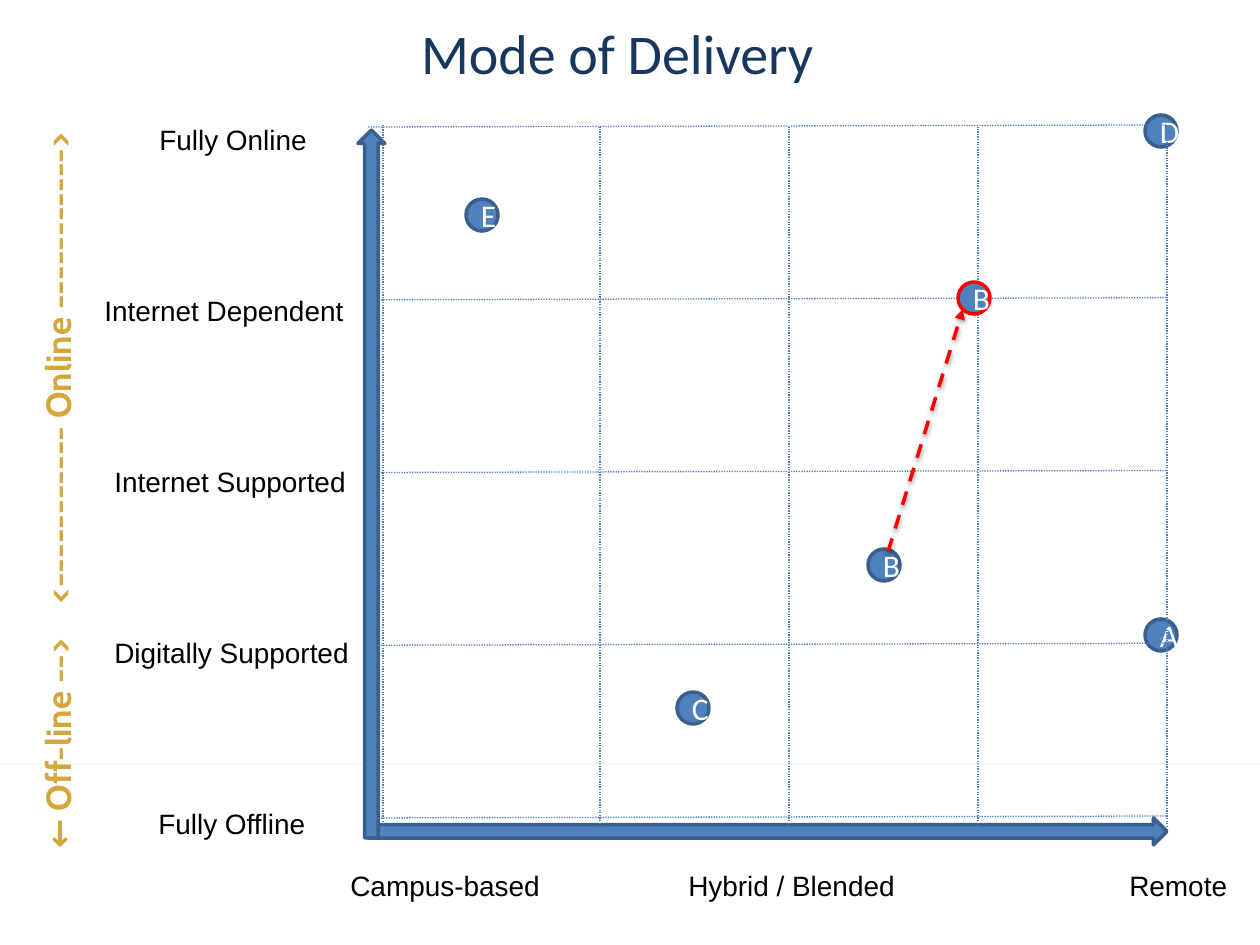
import pptx
import pptx.util
from pptx.dml.color import RGBColor
from pptx.enum.dml import MSO_LINE
from pptx.enum.shapes import MSO_CONNECTOR, MSO_SHAPE
from pptx.enum.text import MSO_ANCHOR, PP_ALIGN
from pptx.oxml import parse_xml
from pptx.oxml.ns import nsdecls

EMU_PER_PX = 914400 / 126
BLUE, DARK_BLUE, GRID_BLUE = "4F81BD", "3A5F8C", "4B7EBC"
NAVY, GOLD, RED, BLACK, WHITE = "17375E", "D4A73C", "FF0000", "000000", "FFFFFF"


def px(n):
    return pptx.util.Emu(round(n * EMU_PER_PX))


def rgb(value):
    return RGBColor.from_string(value)


def set_effects(sp, alpha=None):
    """Add an empty effect list, or a soft shadow cast downwards."""
    shadow = "" if alpha is None else (
        '<a:outerShdw blurRad="39370" dist="22860" dir="5400000" rotWithShape="0">'
        f'<a:srgbClr val="{BLACK}"><a:alpha val="{alpha * 1000}"/></a:srgbClr></a:outerShdw>')
    sp._element.spPr.append(
        parse_xml(f'<a:effectLst {nsdecls("a")}>{shadow}</a:effectLst>'))


def set_text(sp, text, size, font, color, align=PP_ALIGN.LEFT,
             anchor=MSO_ANCHOR.MIDDLE, bold=False, wrap=False):
    tf = sp.text_frame
    tf.text = text
    tf.word_wrap = wrap
    tf.vertical_anchor = anchor
    p = tf.paragraphs[0]
    p.alignment = align
    f = p.runs[0].font
    f.size, f.name, f.bold = pptx.util.Pt(size), font, bold
    f.color.rgb = rgb(color)


def clear_insets(sp):
    tf = sp.text_frame
    tf.margin_left = tf.margin_right = tf.margin_top = tf.margin_bottom = 0


def add_block(s, kind, x, y, w, h, line=DARK_BLUE):
    sp = s.shapes.add_shape(kind, px(x), px(y), px(w), px(h))
    sp.shadow.inherit = False
    sp.fill.solid()
    sp.fill.fore_color.rgb = rgb(BLUE)
    sp.line.color.rgb = rgb(line)
    sp.line.width = pptx.util.Pt(2)
    return sp


def add_line(s, x1, y1, x2, y2, color, width, dash):
    ln = s.shapes.add_connector(MSO_CONNECTOR.STRAIGHT, px(x1), px(y1), px(x2), px(y2))
    ln.line.color.rgb = rgb(color)
    ln.line.width = pptx.util.Pt(width)
    ln.line.dash_style = dash
    return ln


def add_point(s, x, y, letter, line=DARK_BLUE):
    sp = add_block(s, MSO_SHAPE.OVAL, x, y, 32, 32, line)
    set_text(sp, letter, 18, "Calibri", WHITE, PP_ALIGN.CENTER, wrap=True)


def add_label(s, x, y, w, text):
    sp = s.shapes.add_textbox(px(x), px(y), px(w), px(49))
    set_text(sp, text, 16, "Arial", BLACK)


def add_title(s, x, y, w, h):
    sp = s.shapes.title
    sp.left, sp.top, sp.width, sp.height = px(x), px(y), px(w), px(h)
    clear_insets(sp)
    set_text(sp, "Mode of Delivery", 32, "Calibri", NAVY, PP_ALIGN.CENTER)


def add_footer_band(s, x, y, w, h):
    sp = s.shapes.add_shape(MSO_SHAPE.RECTANGLE, px(x), px(y), px(w), px(h))
    sp.fill.solid()
    sp.fill.fore_color.rgb = rgb(WHITE)
    sp.line.fill.background()
    set_effects(sp, alpha=35)


def add_plot(s, x, y, w, h):
    # Points
    for dx, dy, letter in [(777, 492, "A"), (777, -12, "D"), (309, 565, "C"),
                           (500, 422, "B"), (98, 72, "E")]:
        add_point(s, x + dx, y + dy, letter)

    # Axes
    add_block(s, MSO_SHAPE.RIGHT_ARROW, x, y + h - 11, w, 27)
    add_block(s, MSO_SHAPE.UP_ARROW, x - 10, y + 3, 27, h + 6)

    # Grid: rows rise slightly to the right, outer columns sit a little higher
    for row in range(5):
        gy = y + 172.75 * row
        add_grid_line(s, x, gy, x + w, gy - 2)
    for dx, dy in [(15, -2), (232, 0), (421, 0), (610, 0), (w, -2)]:
        add_grid_line(s, x + dx, y + h + dy, x + dx, y + dy)

    # Shift of B
    add_point(s, x + 590, y + 155, "B", RED)
    shift = add_line(s, x + 520, y + 425, x + 595, y + 182, RED, 2, MSO_LINE.DASH)
    shift.line._get_or_add_ln().append(
        parse_xml(f'<a:tailEnd {nsdecls("a")} type="triangle"/>'))
    set_effects(shift, alpha=38)


def add_grid_line(s, x1, y1, x2, y2):
    set_effects(add_line(s, x1, y1, x2, y2, GRID_BLUE, 0.75, MSO_LINE.ROUND_DOT))


def add_row_labels(s, x, y, pitch):
    labels = [("Fully Online", 55, 173), ("Internet Dependent", 0, 276),
              ("Internet Supported", 10, 268), ("Digitally Supported", 10, 262),
              ("Fully Offline", 54, 175)]
    for i, (text, dx, w) in enumerate(labels):
        add_label(s, x + dx, y + pitch * i, w, text)


def add_column_labels(s, x, y):
    for text, dx, w in [("Campus-based", 0, 224), ("Hybrid / Blended", 338, 242),
                        ("Remote", 779, 128)]:
        add_label(s, x + dx, y, w, text)


def add_side_range(s, x, y, w, h, text):
    """Text read upwards, filling the upright box x, y, w, h."""
    sp = s.shapes.add_textbox(px(x + (w - h) / 2), px(y + (h - w) / 2), px(h), px(w))
    sp.rotation = 270
    clear_insets(sp)
    set_text(sp, text, 20, "Cabin", GOLD, PP_ALIGN.CENTER, MSO_ANCHOR.TOP, bold=True)


def main():
    prs = pptx.Presentation()
    prs.slide_width, prs.slide_height = px(1260), px(945)
    s = prs.slides.add_slide(prs.slide_layouts[5])

    add_footer_band(s, 0, 765, 1260, 184)
    add_title(s, 343, 8, 549, 89)
    add_plot(s, 368, 127, 799, 702)
    add_row_labels(s, 92, 115, 171)
    add_column_labels(s, 338, 861)
    add_side_range(s, 36, 627, 62, 233, "← Off-line -->")
    add_side_range(s, 36, 132, 62, 472, "<----------- Online ----------->")

    prs.save("out.pptx")


if __name__ == "__main__":
    main()
